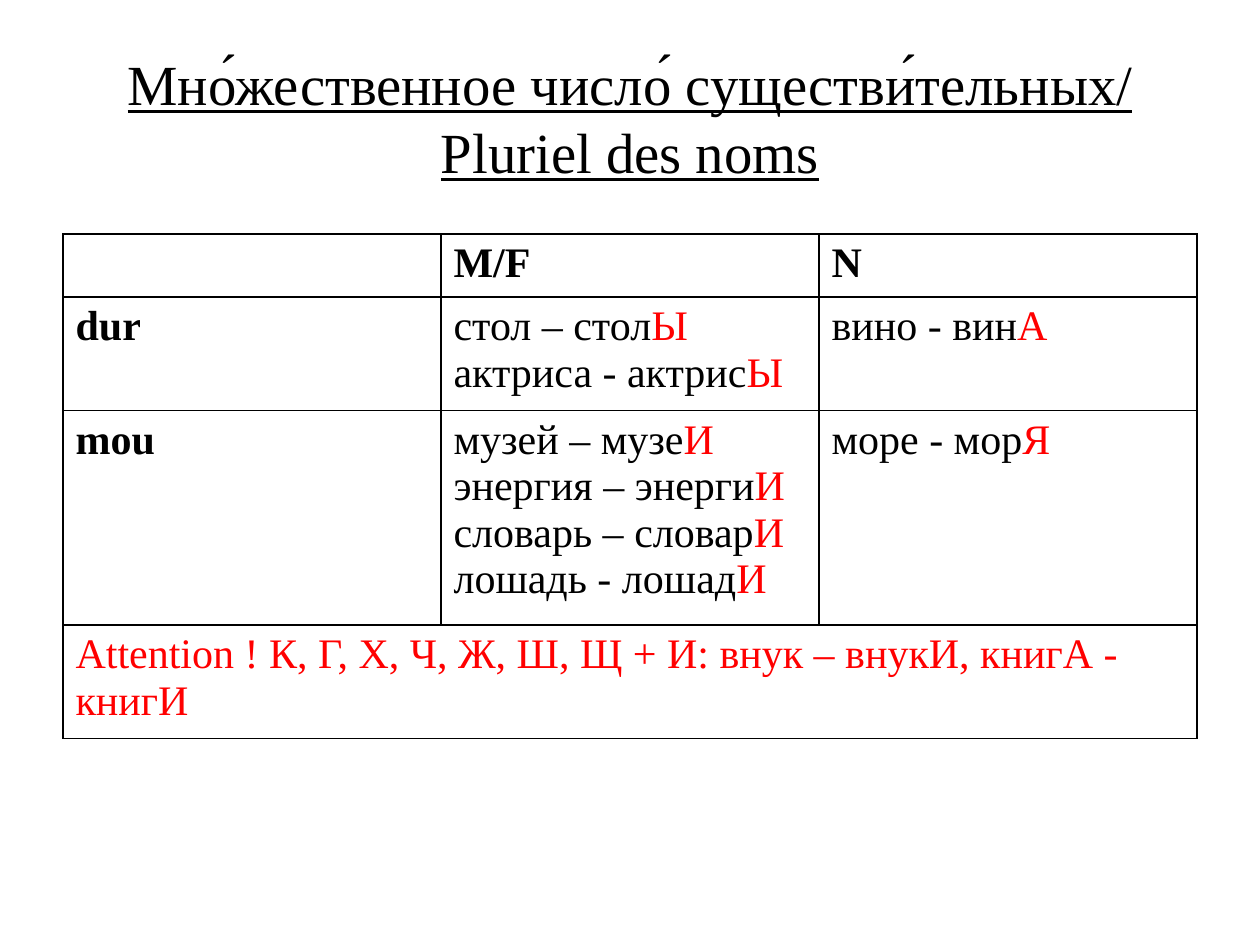
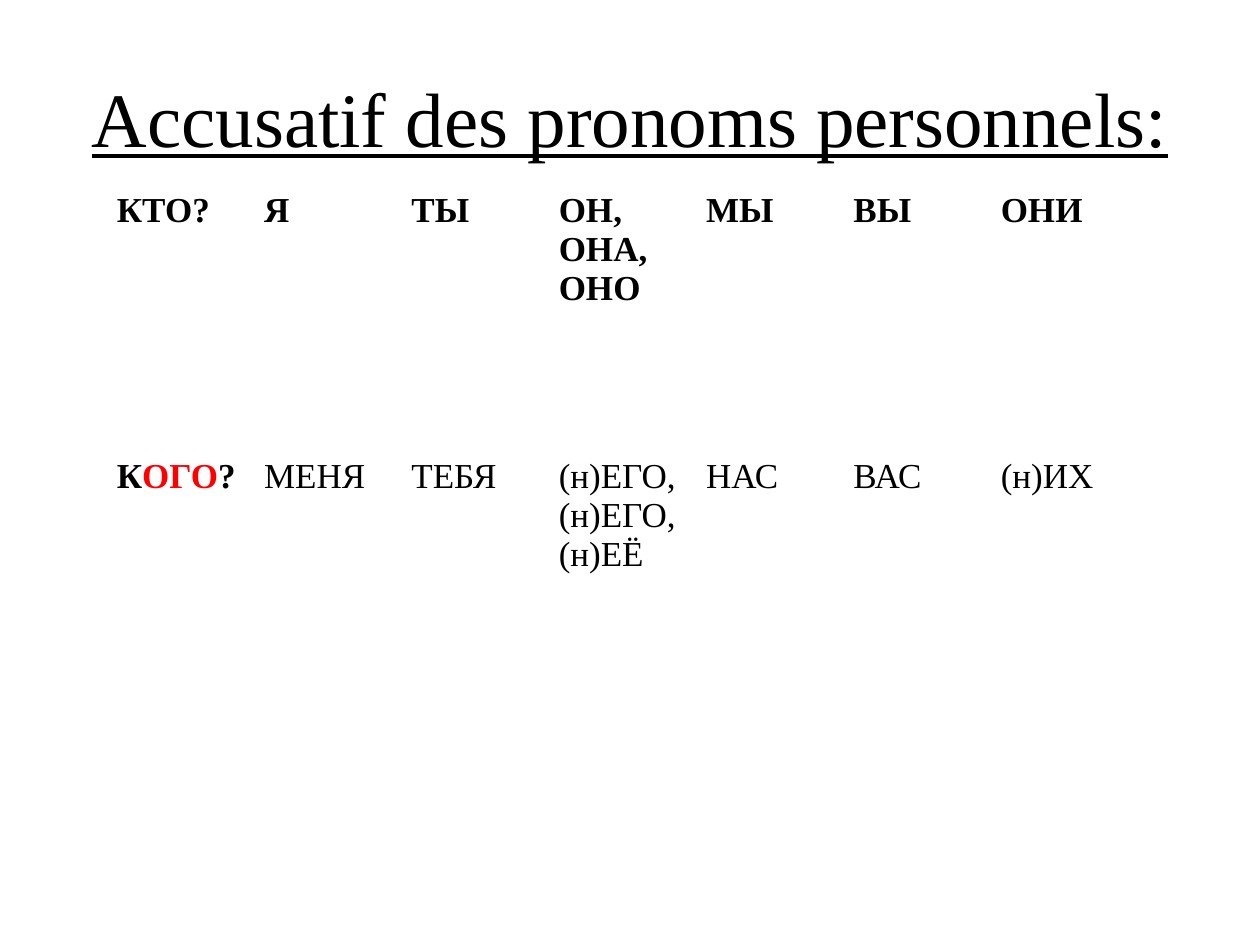
from lxml import etree
from pptx import Presentation
from pptx.dml.color import RGBColor
from pptx.enum import text
from pptx.oxml import ns
from pptx.util import Cm, Pt

COLORS = {"ink": "000000", "ending": "FF0000"}
FONT = "Times New Roman"


def add_spans(para, marked, size, bold=False, underline=False):
    """Add runs to a paragraph; every second part between bars is red."""
    for index, part in enumerate(marked.split("|")):
        if part:
            span = para.add_run()
            span.text = part
            span.font.name = FONT
            span.font.size = Pt(size)
            span.font.bold = bold
            span.font.underline = underline
            color = COLORS["ending" if index % 2 else "ink"]
            span.font.color.rgb = RGBColor.from_string(color)


def add_border(cell):
    properties = cell._tc.get_or_add_tcPr()
    for index, side in enumerate(("lnL", "lnR", "lnT", "lnB")):
        line = etree.Element(ns.qn(f"a:{side}"), w=str(Pt(1)))
        fill = etree.SubElement(line, ns.qn("a:solidFill"))
        etree.SubElement(fill, ns.qn("a:srgbClr"), val=COLORS["ink"])
        properties.insert(index, line)


PAGES = [
    {
        "title": "Мно́жественное число́ существи́тельных/ Pluriel des noms",
        "title_size": 32.4,
        "left": 1.27, "top": 4.72, "column": 7.62,
        "heights": [1.19, 2.12, 4.01, 2.12],
        "size": 24, "bordered": True, "merged_rows": [3],
        "rows": [
            ["", "M/F", "N"],
            ["dur", "стол – стол|Ы|\nактриса - актрис|Ы|", "вино - вин|А|"],
            ["mou",
             "музей – музе|И|\nэнергия – энерги|И|\nсловарь – словар|И|\nлошадь - лошад|И|",
             "море - мор|Я|"],
            ["|Attention ! К, Г, Х, Ч, Ж, Ш, Щ + И: внук – внукИ, книгА - книгИ|"],
        ],
    },
    {
        "title": "Accusatif des pronoms personnels:",
        "title_size": 44,
        "left": 2.1, "top": 3.73, "column": 2.97,
        "heights": [5.36, 6.63],
        "size": 20, "bordered": False, "merged_rows": [],
        "rows": [
            ["КТО?", "Я", "ТЫ", "ОН, ОНА, ОНО", "МЫ", "ВЫ", "ОНИ"],
            ["К|ОГО|?", "МЕНЯ", "ТЕБЯ", "(н)ЕГО,\n(н)ЕГО, (н)ЕЁ", "НАС", "ВАС", "(н)ИХ"],
        ],
    },
]

deck = Presentation()
deck.slide_width, deck.slide_height = Cm(25.4), Cm(19.05)

for content in PAGES:
    page = deck.slides.add_slide(deck.slide_layouts[6])

    box = page.shapes.add_textbox(Cm(1.27), Cm(0.76), Cm(22.86), Cm(3.18))
    box.text_frame.word_wrap = True
    box.text_frame.vertical_anchor = text.MSO_ANCHOR.MIDDLE
    heading = box.text_frame.paragraphs[0]
    heading.alignment = text.PP_ALIGN.CENTER
    add_spans(heading, content["title"], content["title_size"], underline=True)

    rows, heights = content["rows"], content["heights"]
    count = len(rows[0])
    table = page.shapes.add_table(
        len(rows), count, Cm(content["left"]), Cm(content["top"]),
        Cm(content["column"] * count), Cm(sum(heights))).table
    table.first_row = table.horz_banding = False
    for column in table.columns:
        column.width = Cm(content["column"])
    for row, height in zip(table.rows, heights):
        row.height = Cm(height)
    for r in content["merged_rows"]:
        table.cell(r, 0).merge(table.cell(r, count - 1))

    for cell in (cell for row in table.rows for cell in row.cells):
        cell.fill.background()
        if content["bordered"]:
            add_border(cell)

    for r, row in enumerate(rows):
        for c, words in enumerate(row):
            cell = table.cell(r, c)
            bold = (r == 0 or c == 0) and not cell.is_merge_origin
            for index, line in enumerate(words.split("\n")):
                frame = cell.text_frame
                para = frame.add_paragraph() if index else frame.paragraphs[0]
                add_spans(para, line, content["size"], bold)

deck.save("out.pptx")
